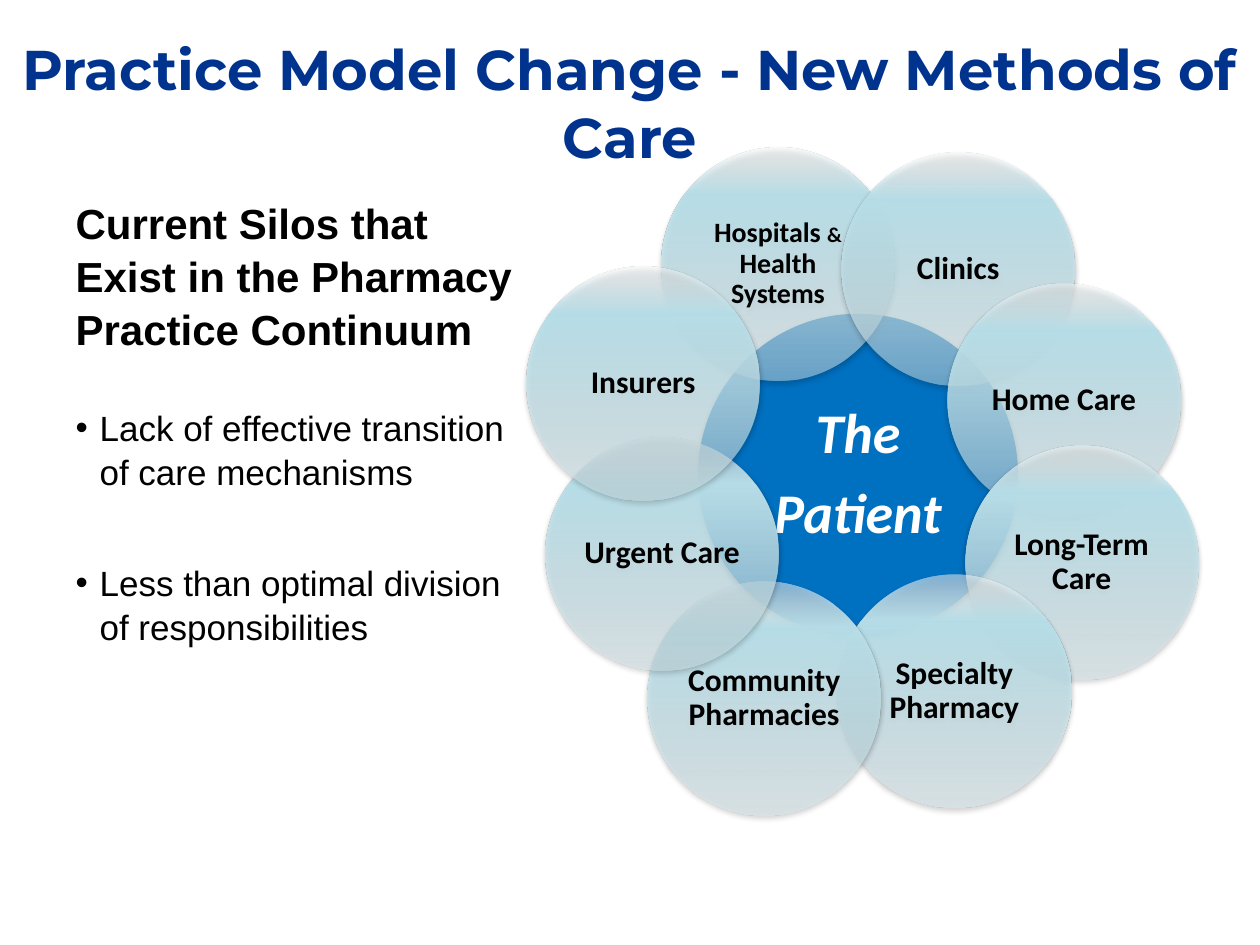
from dataclasses import dataclass
from lxml.etree import SubElement
from pptx import Presentation
from pptx.dml.color import RGBColor
from pptx.enum.shapes import MSO_SHAPE
from pptx.enum.text import MSO_ANCHOR, MSO_AUTO_SIZE, PP_ALIGN
from pptx.oxml.ns import qn
from pptx.util import Inches, Pt


def color(value):
    return RGBColor.from_string(value)


def add_color(parent, value, opacity):
    node = SubElement(parent, qn("a:srgbClr"), val=value)
    SubElement(node, qn("a:alpha"), val=str(opacity * 1000))


@dataclass
class SlideBuilder:
    deck: object
    page: object
    columns: int = 100
    rows: int = 75
    navy: str = "00338E"
    blue: str = "0070C0"
    black: str = "000000"
    white: str = "FFFFFF"
    petal_stops: tuple = ((0, "DBEEF4", 47), (80, "B7DEE8", 100), (100, "F8F8F8", 50))

    def area(self, left, top, width, height):
        column = self.deck.slide_width / self.columns
        row = self.deck.slide_height / self.rows
        return int(left * column), int(top * row), int(width * column), int(height * row)

    def place(self, box, *area):
        box.left, box.top, box.width, box.height = self.area(*area)
        box.text_frame.word_wrap = True
        box.text_frame.auto_size = MSO_AUTO_SIZE.NONE

    def style(self, span, name, size, value, bold=True, italic=False):
        font = span.font
        font.name, font.size, font.bold, font.italic = name, Pt(size), bold, italic
        font.color.rgb = color(value)

    def title(self, text):
        box = self.page.shapes.title
        self.place(box, 0, 4.2, 100, 7.8)
        box.text_frame.text = text
        box.text_frame.vertical_anchor = MSO_ANCHOR.MIDDLE
        para = box.text_frame.paragraphs[0]
        para.alignment = PP_ALIGN.CENTER
        self.style(para.runs[0], "Montserrat", 32, self.navy)

    def body(self, heading, items):
        box = self.page.placeholders[1]
        self.place(box, 5, 15, 37.5, 44.2)
        frame = box.text_frame
        frame.text = "\n".join([heading] + [text for text, gap in items])
        gaps = [0] + [gap for text, gap in items]
        for index, (para, gap) in enumerate(zip(frame.paragraphs, gaps)):
            is_item = index > 0
            indent = Inches(0.19) if is_item else 0
            properties = para._p.get_or_add_pPr()
            properties.set("marL", str(indent))
            properties.set("indent", str(-indent))
            if is_item:
                SubElement(properties, qn("a:buChar"), char="•")
            else:
                SubElement(properties, qn("a:buNone"))
            para.space_before = Pt(gap)
            para.line_spacing = 1.05
            self.style(para.runs[0], "Arial", 20 if is_item else 24, self.black, not is_item)

    def circle(self, left, top, width, height):
        shape = self.page.shapes.add_shape(MSO_SHAPE.OVAL, *self.area(left, top, width, height))
        shape.line.fill.background()
        shape.shadow.inherit = False
        effects = shape._element.spPr.find(qn("a:effectLst"))
        shadow = SubElement(effects, qn("a:outerShdw"), blurRad=str(Pt(3.1)),
                            dist=str(Pt(1.8)), dir="5400000", rotWithShape="0")
        add_color(shadow, self.black, 35)
        frame = shape.text_frame
        frame.word_wrap = True
        frame.vertical_anchor = MSO_ANCHOR.MIDDLE
        frame.margin_left = frame.margin_right = Inches(0.02)
        frame.margin_top = frame.margin_bottom = Inches(0.02)
        return shape

    def center_text(self, frame):
        for para in frame.paragraphs:
            para.alignment = PP_ALIGN.CENTER
            para.line_spacing = 0.9

    def hub(self, text):
        shape = self.circle(55.4, 24.9, 25.4, 25.6)
        shape.fill.solid()
        shape.fill.fore_color.rgb = color(self.blue)
        frame = shape.text_frame
        frame.text = text
        self.center_text(frame)
        frame.paragraphs[1].space_before = Pt(11)
        for para in frame.paragraphs:
            self.style(para.runs[0], "Calibri", 32, self.white, italic=True)

    def petal(self, left, top, spans):
        shape = self.circle(left, top, 18.5, 18.5)
        shape.fill.gradient()
        shape.fill.gradient_angle = 90
        stops = shape._element.spPr.find(qn("a:gradFill")).find(qn("a:gsLst"))
        for stop in list(stops):
            stops.remove(stop)
        for position, value, opacity in self.petal_stops:
            add_color(SubElement(stops, qn("a:gs"), pos=str(position * 1000)), value, opacity)
        para = shape.text_frame.paragraphs[0]
        for text, size in spans:
            span = para.add_run()
            span.text = text
            self.style(span, "Calibri", size, self.black)
        self.center_text(shape.text_frame)


PETALS = [
    (52.5, 11.7, [("Hospitals ", 16), ("& ", 12), ("Health Systems", 16)]),
    (66.8, 12.1, [("Clinics", 18)]),
    (75.2, 22.5, [("Home Care", 18)]),
    (76.6, 35.4, [("Long-Term Care", 18)]),
    (66.5, 45.6, [("Specialty Pharmacy", 18)]),
    (51.4, 46.2, [("Community Pharmacies", 18)]),
    (43.3, 34.7, [("Urgent Care", 18)]),
    (41.8, 21.2, [("Insurers", 18)]),
]


def main():
    deck = Presentation()
    deck.slide_width, deck.slide_height = Inches(10), Inches(7.5)
    page = deck.slides.add_slide(deck.slide_layouts[1])
    builder = SlideBuilder(deck, page)
    builder.title("Practice Model Change - New Methods of Care")
    builder.body("Current Silos that Exist in the Pharmacy Practice Continuum", [
        ("Lack of effective transition of care mechanisms", 29),
        ("Less than optimal division of responsibilities", 38),
    ])
    builder.hub("The\nPatient")
    for left, top, spans in PETALS:
        builder.petal(left, top, spans)
    deck.save("out.pptx")


if __name__ == "__main__":
    main()
